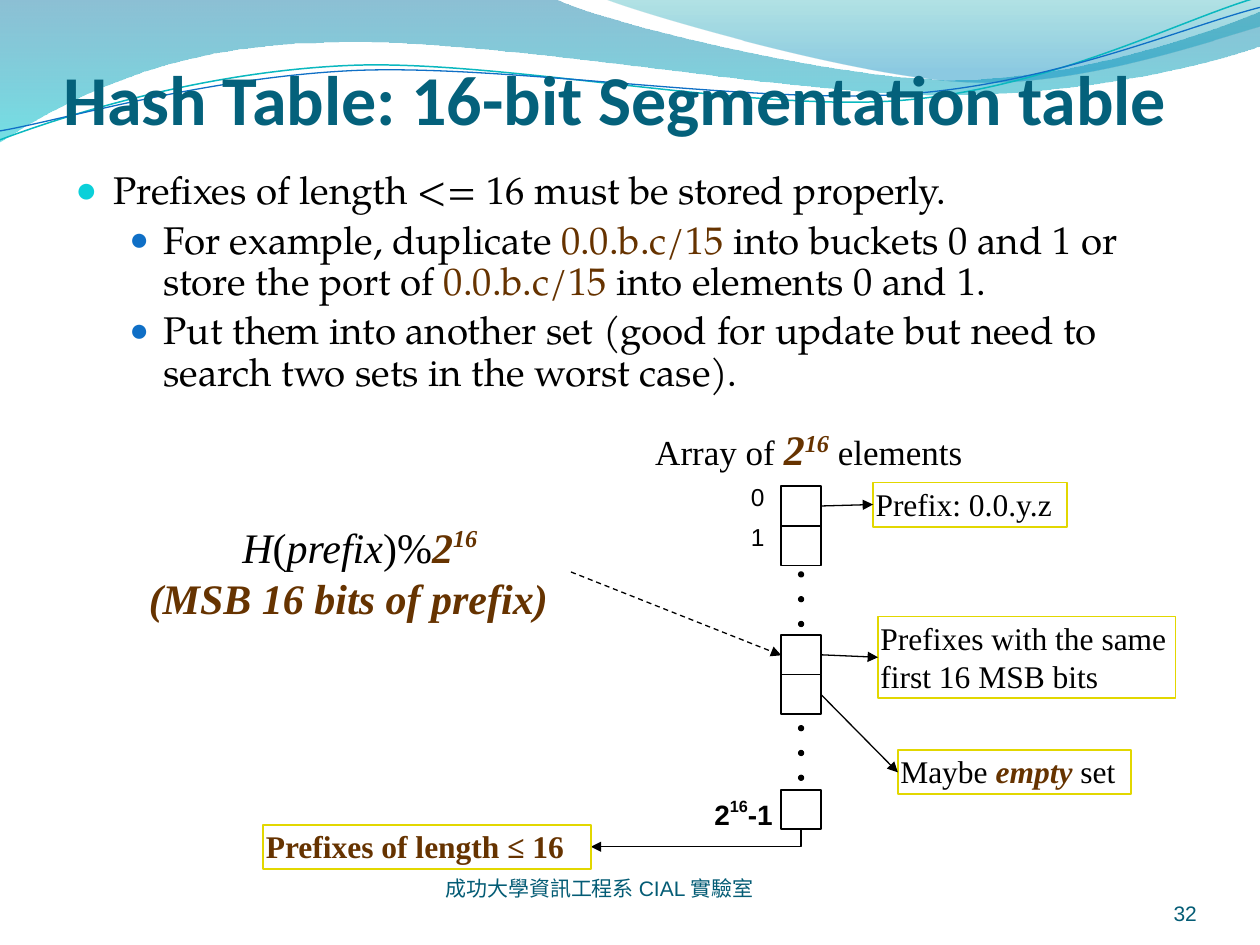
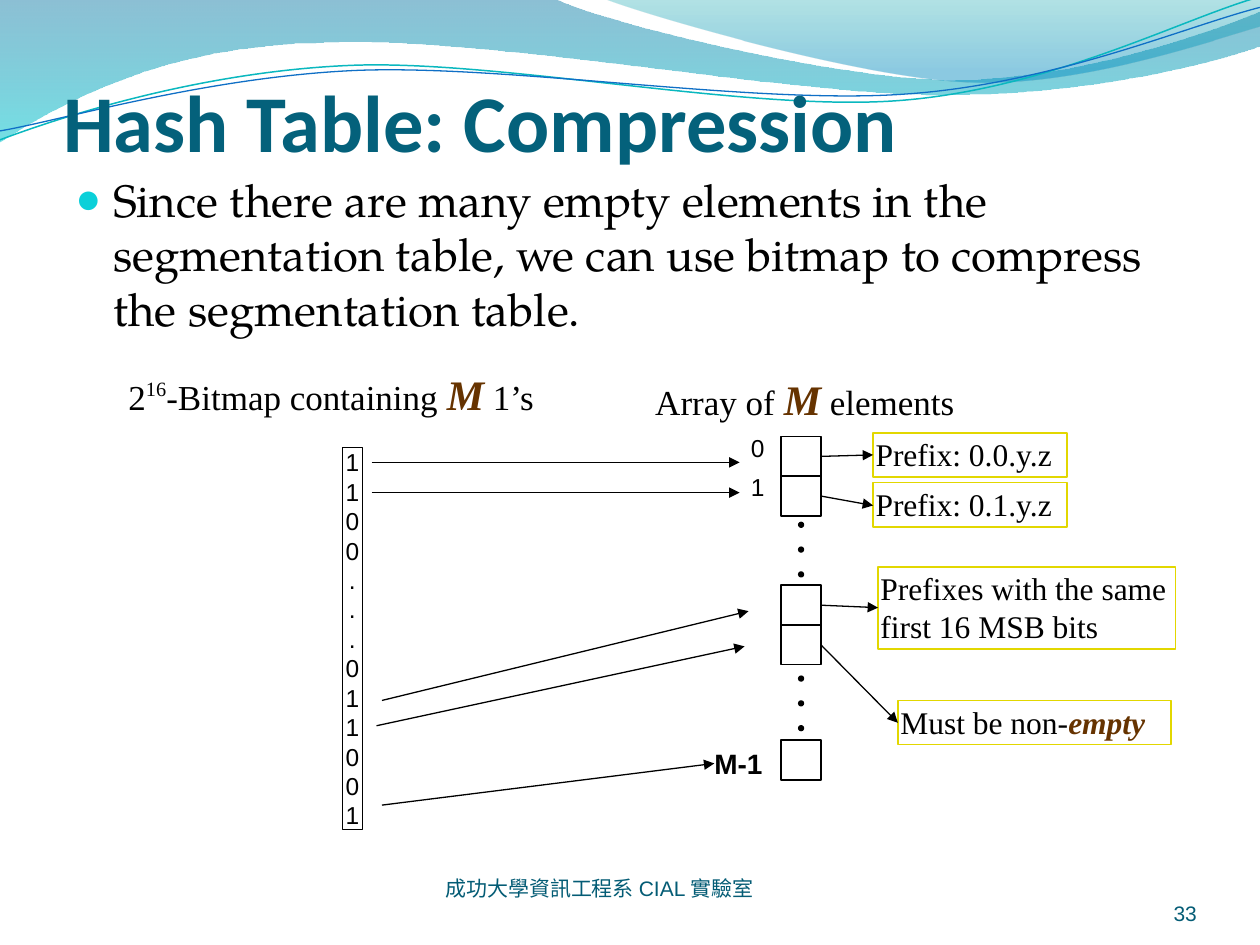
"""Build two slides on hash tables: the segmentation table and its compression."""
import dataclasses

import pptx
import pptx.dml.color
import pptx.enum.dml
import pptx.enum.shapes
import pptx.enum.text
import pptx.oxml.ns
import pptx.util
from lxml import etree

Cm = pptx.util.Cm
Pt = pptx.util.Pt
RGBColor = pptx.dml.color.RGBColor
Shape = pptx.enum.shapes.MSO_SHAPE
Connector = pptx.enum.shapes.MSO_CONNECTOR
Align = pptx.enum.text.PP_ALIGN
Anchor = pptx.enum.text.MSO_ANCHOR
qn = pptx.oxml.ns.qn

BLACK = RGBColor(0x00, 0x00, 0x00)
BROWN = RGBColor(0x66, 0x33, 0x00)
YELLOW = RGBColor(0xE2, 0xD7, 0x00)
TITLE_TEAL = RGBColor(0x04, 0x61, 0x7B)
FOOTER_TEAL = RGBColor(0x04, 0x5C, 0x75)
CYAN = RGBColor(0x0B, 0xD0, 0xD9)
BLUE = RGBColor(0x0F, 0x6F, 0xC6)
WAVE_CYAN = RGBColor(0x0A, 0xB8, 0xBF)
DEEP_BLUE = RGBColor(0x00, 0x74, 0xA1)
AQUA = RGBColor(0x00, 0xC6, 0xCF)
SEA_GREEN = RGBColor(0x00, 0xA1, 0xA9)
SKY_BLUE = RGBColor(0x00, 0x8B, 0xBF)

SANS, SERIF, BODY, HEAD, CJK = (
    "Arial", "Times New Roman", "TeX Gyre Pagella", "Calibri", "Noto Sans CJK SC")

LONG_BAND = [
    [(0, -0.03)], [(11.18, -0.03)],
    [(12.09, 0.43), (16.87, 1.6), (19.25, 1.6)],
    [(21.67, 1.6), (24.33, 0.66), (25.4, 0.23)], [(25.43, 0.91)],
    [(24.97, 1.12), (22.1, 1.93), (18.95, 1.91)],
    [(15.8, 1.91), (9.7, 0.71), (6.53, 0.86)],
    [(3.28, 0.89), (1.17, 2.11), (-0.03, 2.87)]]
RIGHT_BAND = [
    [(12.17, -0.03)],
    [(12.93, 0.28), (17.32, 1.57), (19.53, 1.65)],
    [(21.74, 1.75), (24.41, 0.81), (25.4, 0.53)], [(25.4, 0)]]
CYAN_WAVE = [
    [(0, 2.82)],
    [(1.22, 2.36), (4.01, 1.45), (7.04, 1.32)],
    [(10.03, 1.19), (15.06, 2.26), (18.11, 2.03)],
    [(21.16, 1.8), (23.83, 0.38), (25.35, -0.05)]]
BLUE_WAVE = [
    [(0, 2.64)],
    [(1.19, 2.44), (4.17, 1.55), (7.19, 1.42)],
    [(10.24, 1.3), (15.16, 2.11), (18.21, 1.9)],
    [(21.23, 1.7), (23.9, 0.53), (25.4, 0.15)]]

CELL = 0.8
CELL_LEFT = 15.75
CELL_RIGHT = CELL_LEFT + CELL
CELL_OFFSETS = (0, CELL, 3, 3 + CELL, 6.12)
DOT = 0.1
DOT_STEP = 0.5


@dataclasses.dataclass
class Span:
    """A stretch of text in one format."""
    text: str
    size: float
    font: str = SERIF
    color: RGBColor = BLACK
    bold: bool = False
    italic: bool = False
    rise: int = 0


def key_span(text, size, rise=0):
    """Return a brown bold italic span."""
    return Span(text, size, color=BROWN, bold=True, italic=True, rise=rise)


def add_spans(para, spans):
    """Add formatted spans to a paragraph."""
    for span in spans:
        run = para.add_run()
        run.text = span.text
        font = run.font
        font.size, font.name = Pt(span.size), span.font
        font.bold, font.italic = span.bold, span.italic
        font.color.rgb = span.color
        properties = run._r.get_or_add_rPr()
        if span.rise:
            properties.set("baseline", str(span.rise * 1000))
        if span.font == CJK:
            etree.SubElement(properties, qn("a:ea"), typeface=CJK)


def fill_frame(frame, paras, insets=(0, 0, 0, 0), align=Align.LEFT,
               anchor=Anchor.TOP, wrap=True):
    """Set up a text frame and return its filled paragraphs."""
    frame.auto_size = pptx.enum.text.MSO_AUTO_SIZE.NONE
    frame.word_wrap, frame.vertical_anchor = wrap, anchor
    (frame.margin_left, frame.margin_top,
     frame.margin_right, frame.margin_bottom) = map(Cm, insets)
    for index, spans in enumerate(paras):
        para = frame.add_paragraph() if index else frame.paragraphs[0]
        para.alignment = align
        add_spans(para, spans)
    return frame.paragraphs


def add_text(slide, place, paras, **layout):
    """Add a text box and return its paragraphs."""
    box = slide.shapes.add_textbox(*map(Cm, place))
    return fill_frame(box.text_frame, paras, **layout)


def add_outline(slide, kind, place, color=BLACK, width=1):
    """Add a preset shape with a line and no fill."""
    shape = slide.shapes.add_shape(kind, *map(Cm, place))
    shape.shadow.inherit = False
    shape.fill.background()
    shape.line.color.rgb, shape.line.width = color, Pt(width)
    return shape


def add_note(slide, place, spans):
    """Add a yellow framed note."""
    box = add_outline(slide, Shape.RECTANGLE, place, YELLOW)
    fill_frame(box.text_frame, [spans], insets=(0.05,) * 4)


def add_arrow(slide, start, end, kind=Connector.STRAIGHT, dashed=False):
    """Add a thin black arrow."""
    arrow = slide.shapes.add_connector(kind, *map(Cm, start + end))
    arrow.line.color.rgb, arrow.line.width = BLACK, Pt(0.75)
    if dashed:
        arrow.line.dash_style = pptx.enum.dml.MSO_LINE.DASH
    etree.SubElement(arrow.line._get_or_add_ln(), qn("a:tailEnd"), type="triangle")
    etree.SubElement(arrow.element.spPr, qn("a:effectLst"))
    return arrow


def add_corner_arrow(slide, start, end):
    """Add an arrow that runs down and then left."""
    middle_x, middle_y = (start[0] + end[0]) / 2, (start[1] + end[1]) / 2
    half_drop, half_run = (end[1] - start[1]) / 2, (start[0] - end[0]) / 2
    arrow = add_arrow(slide, (middle_x - half_drop, middle_y - half_run),
                      (middle_x + half_drop, middle_y + half_run), Connector.ELBOW)
    arrow.element.spPr.find(qn("a:xfrm")).set("rot", "5400000")
    arrow.element.spPr.find(qn("a:prstGeom")).set("prst", "bentConnector2")


def add_freeform(slide, outline, close):
    """Add a freeform of straight lines and cubic curves."""
    points = [(Cm(x), Cm(y)) for segment in outline for x, y in segment]
    builder = slide.shapes.build_freeform(*points[0])
    builder.add_line_segments(points[1:], close=close)
    shape = builder.convert_to_shape()
    shape.shadow.inherit = False
    lines = iter(list(shape.element.spPr.iter(qn("a:lnTo"))))
    for segment in outline[1:]:
        pieces = [next(lines) for _ in segment]
        if len(pieces) == 3:
            curve = etree.Element(qn("a:cubicBezTo"))
            pieces[0].addprevious(curve)
            for piece in pieces:
                curve.append(piece[0])
                piece.getparent().remove(piece)
    return shape


def add_band(slide, outline, stops):
    """Add a see-through band shaded from top to bottom."""
    band = add_freeform(slide, outline, True)
    band.line.fill.background()
    band.fill.gradient()
    band.fill.gradient_angle = 270
    for stop, (position, color, _) in zip(band.fill.gradient_stops, stops):
        stop.position, stop.color.rgb = position, color
    for tint, (_, _, opacity) in zip(band.element.spPr.iter(qn("a:srgbClr")), stops):
        etree.SubElement(tint, qn("a:alpha"), val=str(opacity * 1000))


def add_wave(slide, outline, color, width):
    """Add a thin curved line."""
    wave = add_freeform(slide, outline, False)
    wave.fill.background()
    wave.line.color.rgb, wave.line.width = color, Pt(width)


def add_page(deck, number, title, title_top, title_size):
    """Add a slide with the shared bands, title and footer."""
    slide = deck.slides.add_slide(deck.slide_layouts[5])
    add_band(slide, LONG_BAND, [(0, DEEP_BLUE, 45), (1, AQUA, 55)])
    add_band(slide, RIGHT_BAND, [(0, SEA_GREEN, 30), (0.8, SKY_BLUE, 45)])
    add_wave(slide, CYAN_WAVE, WAVE_CYAN, 0.85)
    add_wave(slide, BLUE_WAVE, BLUE, 0.75)
    footer = [Span("成功大學資訊工程系 ", 12, CJK, FOOTER_TEAL),
              Span("CIAL", 12, SANS, FOOTER_TEAL),
              Span(" 實驗室", 12, CJK, FOOTER_TEAL)]
    add_text(slide, (7.42, 17.65, 9.32, 0.51), [footer],
             align=Align.CENTER, anchor=Anchor.BOTTOM)
    add_text(slide, (22.02, 17.65, 2.11, 1.02),
             [[Span(str(number), 12, SANS, FOOTER_TEAL)]],
             align=Align.RIGHT, anchor=Anchor.BOTTOM)
    heading = slide.shapes.title
    heading.element.getparent().append(heading.element)
    heading.left, heading.top, heading.width, heading.height = map(
        Cm, (1.27, title_top, 22.86, 2.16))
    fill_frame(heading.text_frame, [[Span(title, title_size, HEAD, TITLE_TEAL, True)]],
               insets=(0, 0.13, 0, 0), anchor=Anchor.BOTTOM)
    return slide


def add_bullets(slide, height, items, size, spacing):
    """Add the body text, one (level, spans) item per bullet."""
    paras = add_text(slide, (1.27, 3.33, 22.86, height),
                     [spans for _, spans in items], insets=(0.25, 0.13, 0.25, 0.13))
    looks = ((0.76, 0.76, CYAN, 95), (1.78, 0.69, BLUE, 85))
    for index, (para, (level, _)) in enumerate(zip(paras, items)):
        margin, hang, color, percent = looks[level]
        para.level, para.line_spacing = level, spacing
        para.space_before = Pt(size * 0.2 if index else 0)
        properties = para._p.get_or_add_pPr()
        properties.set("marL", str(Cm(margin)))
        properties.set("indent", str(-Cm(hang)))
        tint = etree.SubElement(properties, qn("a:buClr"))
        etree.SubElement(tint, qn("a:srgbClr"), val=str(color))
        etree.SubElement(properties, qn("a:buSzPct"), val=str(percent * 1000))
        etree.SubElement(properties, qn("a:buFont"), typeface=SANS)
        etree.SubElement(properties, qn("a:buChar"), char="●")


def add_array(slide, top, count, last_label, last_note, note_width):
    """Draw the array column with its labels, notes and arrows."""
    add_text(slide, (13.21, top - 1.27, 7.59, 1.02),
             [[Span("Array of ", 20), *count, Span(" elements", 20)]])
    for offset in CELL_OFFSETS:
        add_outline(slide, Shape.RECTANGLE, (CELL_LEFT, top + offset, CELL, CELL))
    for first in (1.73, 4.83):
        for step in range(3):
            dot = add_outline(slide, Shape.OVAL, (
                16.1, top + first + step * DOT_STEP, DOT, DOT), width=0.75)
            dot.fill.solid()
            dot.fill.fore_color.rgb = BLACK
    for index in range(2):
        add_text(slide, (15.14, top - 0.08 + index * CELL, 0.28, 0.58),
                 [[Span(str(index), 14, SANS)]], wrap=False)
    add_text(slide, (14.4, top + 6.25, 1.24, 0.69), [last_label], wrap=False)
    add_note(slide, (17.6, top - 0.07, 3.91, 0.89), [Span("Prefix: 0.0.y.z", 18)])
    add_note(slide, (17.7, top + 2.63, 6, 1.65),
             [Span("Prefixes with the same first 16 MSB bits", 18)])
    add_note(slide, (18.1, top + 5.32, note_width, 0.89), last_note)
    for start, end_x, end in ((0.4, 17.6, 0.37), (3.4, 17.7, 3.45), (4.2, 18.1, 5.77)):
        add_arrow(slide, (CELL_RIGHT, top + start), (end_x, top + end))


def build_segmentation(deck):
    """Build the slide on the 16-bit segmentation table."""
    slide = add_page(deck, 32, "Hash Table: 16-bit Segmentation table", 0.66, 40)
    prefix = Span("0.0.b.c/15", 22, BODY, BROWN)
    add_bullets(slide, 5.28, [
        (0, [Span("Prefixes of length <= 16 must be stored properly.", 22, BODY)]),
        (1, [Span("For example, duplicate ", 22, BODY), prefix,
             Span(" into buckets 0 and 1 or store the port of ", 22, BODY), prefix,
             Span(" into elements 0 and 1.", 22, BODY)]),
        (1, [Span("Put them into another set (good for update but need to "
                  "search two sets in the worst case).", 22, BODY)])], 22, 0.9)
    hash_lines = add_text(slide, (3, 10.52, 8.51, 2.03), [
        [Span("H", 24, italic=True), Span("(", 24), Span("prefix", 24, italic=True),
         Span(")%", 24), key_span("2", 24), key_span("16", 24, 40)],
        [key_span("(MSB 16 bits of prefix)", 24)]])
    hash_lines[0].alignment = Align.CENTER
    add_array(slide, 9.8, [key_span("2", 24), key_span("16", 24, 30)],
              [Span("2", 16, SANS, bold=True), Span("16", 16, SANS, bold=True, rise=48),
               Span("-1", 16, SANS, bold=True)],
              [Span("Maybe ", 18), key_span("empty", 18), Span(" set", 18)], 4.7)
    add_arrow(slide, (11.51, 11.53), (CELL_LEFT, 13.21), dashed=True)
    add_corner_arrow(slide, (16.15, 16.73), (11.91, 17.07))
    add_note(slide, (5.31, 16.63, 6.6, 0.89),
             [Span("Prefixes of length ≤ 16", 18, color=BROWN, bold=True)])


def build_compression(deck):
    """Build the slide on compressing the table with a bitmap."""
    slide = add_page(deck, 33, "Hash Table: Compression", 1.24, 46)
    add_bullets(slide, 4.24, [
        (0, [Span("Since there are many empty elements in the segmentation table, "
                  "we can use bitmap to compress the segmentation table.", 26, BODY)])],
        26, 1.0)
    add_array(slide, 8.8, [key_span("M", 24)], [Span("M-1", 16, SANS, bold=True)],
              [Span("Must be non-", 18), key_span("empty", 18)], 5.51)
    add_note(slide, (17.6, 9.73, 3.91, 0.89), [Span("Prefix: 0.1.y.z", 18)])
    add_arrow(slide, (CELL_RIGHT, 10), (17.6, 10.19))
    add_text(slide, (2.59, 7.42, 8.61, 1.02), [[
        Span("2", 20), Span("16", 20, rise=40), Span("-Bitmap containing ", 20),
        key_span("M", 24), Span(" 1’s", 20)]])
    bitmap = add_outline(slide, Shape.RECTANGLE, (6.9, 9.02, 0.41, 7.7), width=0.75)
    for para in fill_frame(bitmap.text_frame, [[Span(bit, 14, SANS)] for bit
                                               in "1100...011001"], align=Align.CENTER):
        para.line_spacing = Pt(16.8)
    for start, end in (((7.49, 9.32), (14.91, 9.32)), ((7.49, 9.93), (14.91, 9.93)),
                       ((7.7, 14.12), (15.09, 12.32)), ((7.59, 14.63), (15.01, 13.03)),
                       ((7.7, 16.23), (14.4, 15.39))):
        add_arrow(slide, start, end)


def main():
    """Build and save the deck."""
    deck = pptx.Presentation()
    deck.slide_width, deck.slide_height = Cm(25.4), Cm(19.05)
    build_segmentation(deck)
    build_compression(deck)
    deck.save("out.pptx")


if __name__ == "__main__":
    main()
